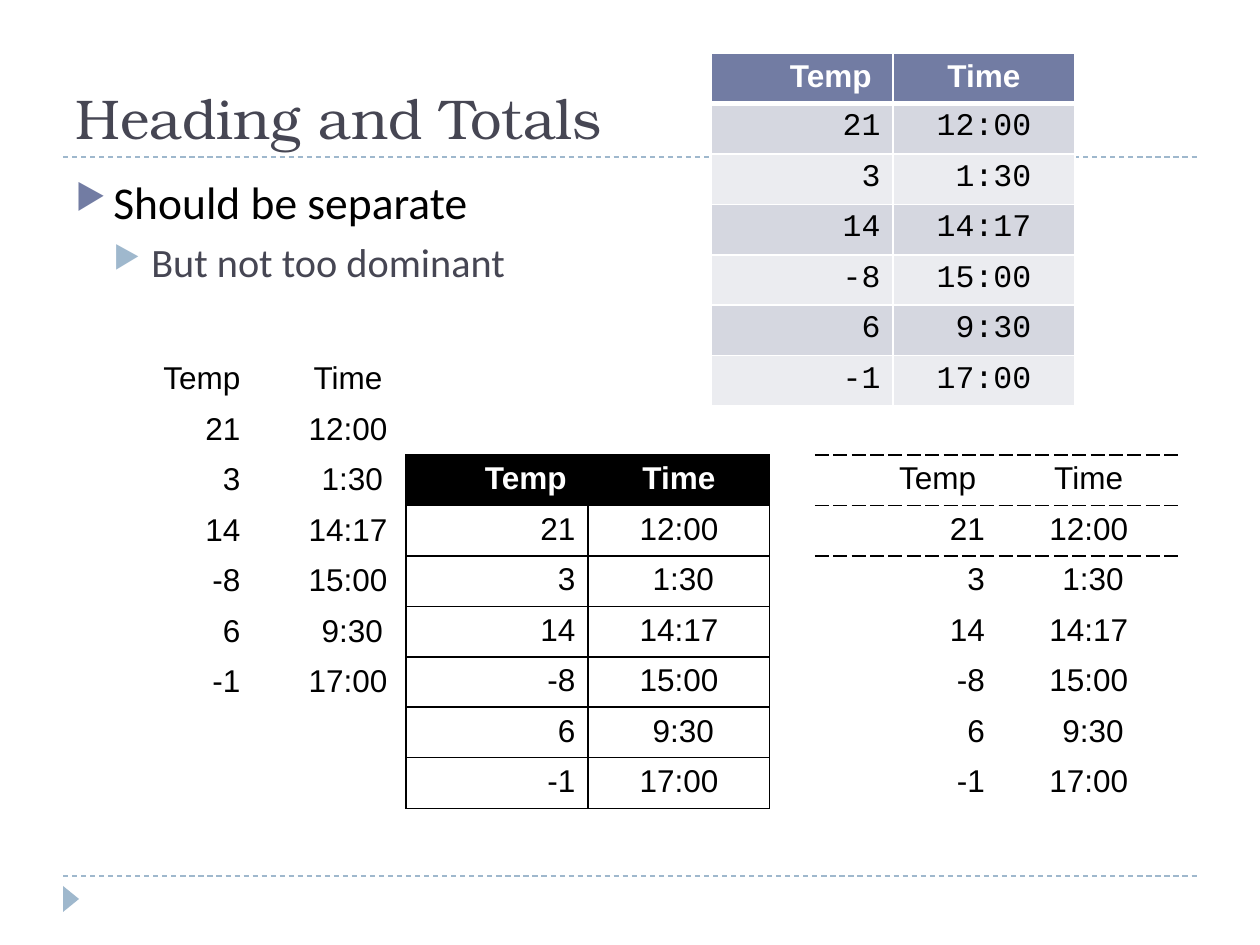
from dataclasses import dataclass
from typing import Callable

from lxml import etree
from pptx import Presentation
from pptx.dml.color import RGBColor
from pptx.enum.dml import MSO_LINE
from pptx.enum.shapes import MSO_CONNECTOR, MSO_SHAPE
from pptx.enum.text import MSO_ANCHOR, MSO_AUTO_SIZE, PP_ALIGN
from pptx.oxml.ns import qn
from pptx.util import Emu, Pt

STRAIGHT = MSO_CONNECTOR.STRAIGHT
TRIANGLE = MSO_SHAPE.ISOSCELES_TRIANGLE
DASH = MSO_LINE.DASH
BOTTOM = MSO_ANCHOR.BOTTOM
NO_AUTOFIT = MSO_AUTO_SIZE.NONE
LEFT, CENTER, RIGHT = PP_ALIGN.LEFT, PP_ALIGN.CENTER, PP_ALIGN.RIGHT
NO_STYLE_NO_GRID = "{2D5ABB26-0587-4C30-8999-92F81FD0307C}"
PX_PER_INCH = 126


@dataclass(frozen=True)
class Theme:
    black: str = "000000"
    white: str = "FFFFFF"
    heading: str = "464653"
    accent: str = "727CA3"
    soft_accent: str = "9FB8CD"
    dark_band: str = "D5D7E0"
    light_band: str = "EBECF0"
    title_font: str = "TeX Gyre Bonum"
    body_font: str = "Calibri"
    table_font: str = "Arial"
    mono_font: str = "Courier New"
    title_size: int = 32
    point_size: int = 26
    subpoint_size: int = 23
    table_size: int = 18


THEME = Theme()
READINGS = [("21", "12:00"), ("3", " 1:30"), ("14", "14:17"),
            ("-8", "15:00"), ("6", " 9:30"), ("-1", "17:00")]


def px(length):
    return Emu(round(length * 914400 / PX_PER_INCH))


def set_font(paragraph, name, size, color, bold=False):
    font = paragraph.font
    font.name, font.size, font.bold = name, Pt(size), bold
    font.color.rgb = RGBColor.from_string(color)


def no_borders(row, col, last_row):
    return {}


def white_borders(row, col, last_row):
    borders = {side: (THEME.white, 1, None) for side in "LRTB"}
    if row < 2:
        borders["B" if row == 0 else "T"] = (THEME.white, 3, None)
    return borders


def grid_borders(row, col, last_row):
    """Black grid, slightly thinner along the outer edge."""
    outer = {"L": col == 0, "R": col == 1, "T": row == 0, "B": row == last_row}
    return {side: (THEME.black, 0.75 if is_outer else 1, None)
            for side, is_outer in outer.items()}


def dashed_header_borders(row, col, last_row):
    sides = {0: "TB", 1: "T"}.get(row, "")
    return {side: (THEME.black, 1, "sysDash") for side in sides}


@dataclass(frozen=True)
class TableLook:
    temp_heading: str = "Temp "
    header_fill: str | None = None
    header_color: str = THEME.black
    header_bold: bool = False
    bands: tuple = (None,)
    body_font: str = THEME.table_font
    borders: Callable = no_borders
    blank_rows: int = 0


BANDED = TableLook(header_fill=THEME.accent, header_color=THEME.white, header_bold=True,
                   bands=(THEME.dark_band, THEME.light_band),
                   body_font=THEME.mono_font, borders=white_borders)
PLAIN = TableLook(temp_heading="Temp", blank_rows=1)
GRID = TableLook(header_fill=THEME.black, header_color=THEME.white, header_bold=True,
                 borders=grid_borders)
DASHED_HEADER = TableLook(borders=dashed_header_borders)


def draw_borders(cell, borders):
    properties = cell._tc.get_or_add_tcPr()
    for side in "LRTB":
        if side not in borders:
            continue
        color, width, dash = borders[side]
        line = etree.SubElement(properties, qn(f"a:ln{side}"), w=str(Pt(width)))
        fill = etree.SubElement(line, qn("a:solidFill"))
        etree.SubElement(fill, qn("a:srgbClr"), val=color)
        if dash:
            etree.SubElement(line, qn("a:prstDash"), val=dash)


def fill_cell(cell, color):
    if color is None:
        cell.fill.background()
    else:
        cell.fill.solid()
        cell.fill.fore_color.rgb = RGBColor.from_string(color)


def add_readings_table(slide, box, look):
    rows = [(look.temp_heading, "Time"), *READINGS, *[("", "")] * look.blank_rows]
    table = slide.shapes.add_table(len(rows), 2, *map(px, box)).table
    table._tbl.tblPr.find(qn("a:tableStyleId")).text = NO_STYLE_NO_GRID
    table.first_row = table.horz_banding = False
    for row, values in enumerate(rows):
        for col, (value, alignment) in enumerate(zip(values, (RIGHT, CENTER))):
            cell = table.cell(row, col)
            cell.text = value
            paragraph = cell.text_frame.paragraphs[0]
            paragraph.alignment = alignment
            draw_borders(cell, look.borders(row, col, len(rows) - 1))
            if row == 0:
                set_font(paragraph, THEME.table_font, THEME.table_size,
                         look.header_color, look.header_bold)
                fill_cell(cell, look.header_fill)
            else:
                set_font(paragraph, look.body_font, THEME.table_size, THEME.black)
                fill_cell(cell, look.bands[(row - 1) % len(look.bands)])


def add_rule(slide, left, right, y):
    rule = slide.shapes.add_connector(STRAIGHT, px(left), px(y), px(right), px(y))
    rule.line.color.rgb = RGBColor.from_string(THEME.soft_accent)
    rule.line.width = Pt(0.75)
    rule.line.dash_style = DASH
    etree.SubElement(rule._element.spPr, qn("a:effectLst"))


def add_frame(slide, box):
    """Two dashed rules across the box and the marker below the lower one."""
    left, top, width, height = box
    for y in (top + height, top):
        add_rule(slide, left, left + width, y)
    marker = slide.shapes.add_shape(TRIANGLE, px(left - 5), px(top + height + 15),
                                    px(26), px(16))
    marker.rotation = 90
    marker.shadow.inherit = False
    marker.fill.solid()
    marker.fill.fore_color.rgb = RGBColor.from_string(THEME.soft_accent)
    marker.line.fill.background()


def place_title(slide, box, text):
    title = slide.shapes.title
    title.left, title.top, title.width, title.height = map(px, box)
    frame = title.text_frame
    frame.text = text
    frame.vertical_anchor = BOTTOM
    frame.auto_size = NO_AUTOFIT
    paragraph = frame.paragraphs[0]
    paragraph.alignment = LEFT
    set_font(paragraph, THEME.title_font, THEME.title_size, THEME.heading)


def add_bullet(paragraph, indent, color):
    properties = paragraph._p.get_or_add_pPr()
    properties.set("marL", str(px(indent)))
    properties.set("indent", str(-px(38)))
    bullet_color = etree.SubElement(properties, qn("a:buClr"))
    etree.SubElement(bullet_color, qn("a:srgbClr"), val=color)
    etree.SubElement(properties, qn("a:buSzPct"), val="76000")
    etree.SubElement(properties, qn("a:buChar"), char="▶")


def add_points(slide, box):
    frame = slide.shapes.add_textbox(*map(px, box)).text_frame
    frame.word_wrap = True
    points = [("Should be separate", THEME.point_size, THEME.black, THEME.accent, 6),
              ("But not too dominant", THEME.subpoint_size, THEME.heading,
               THEME.soft_accent, 5)]
    for level, (text, size, color, bullet_color, space) in enumerate(points):
        paragraph = frame.add_paragraph() if level else frame.paragraphs[0]
        paragraph.text = text
        paragraph.level = level
        paragraph.space_before = Pt(space)
        set_font(paragraph, THEME.body_font, size, color)
        add_bullet(paragraph, 38 * (level + 1), bullet_color)


def main():
    presentation = Presentation()
    presentation.slide_width, presentation.slide_height = px(1260), px(945)
    slide = presentation.slides.add_slide(presentation.slide_layouts[5])
    add_frame(slide, (63, 157, 1134, 719))
    place_title(slide, (63, 21, 1134, 136), "Heading and Totals")
    add_points(slide, (63, 168, 1134, 680))
    add_readings_table(slide, (711, 53, 364, 353), BANDED)
    add_readings_table(slide, (63, 355, 380, 403), PLAIN)
    add_readings_table(slide, (406, 455, 364, 353), GRID)
    add_readings_table(slide, (815, 455, 365, 353), DASHED_HEADER)
    presentation.save("out.pptx")


if __name__ == "__main__":
    main()
